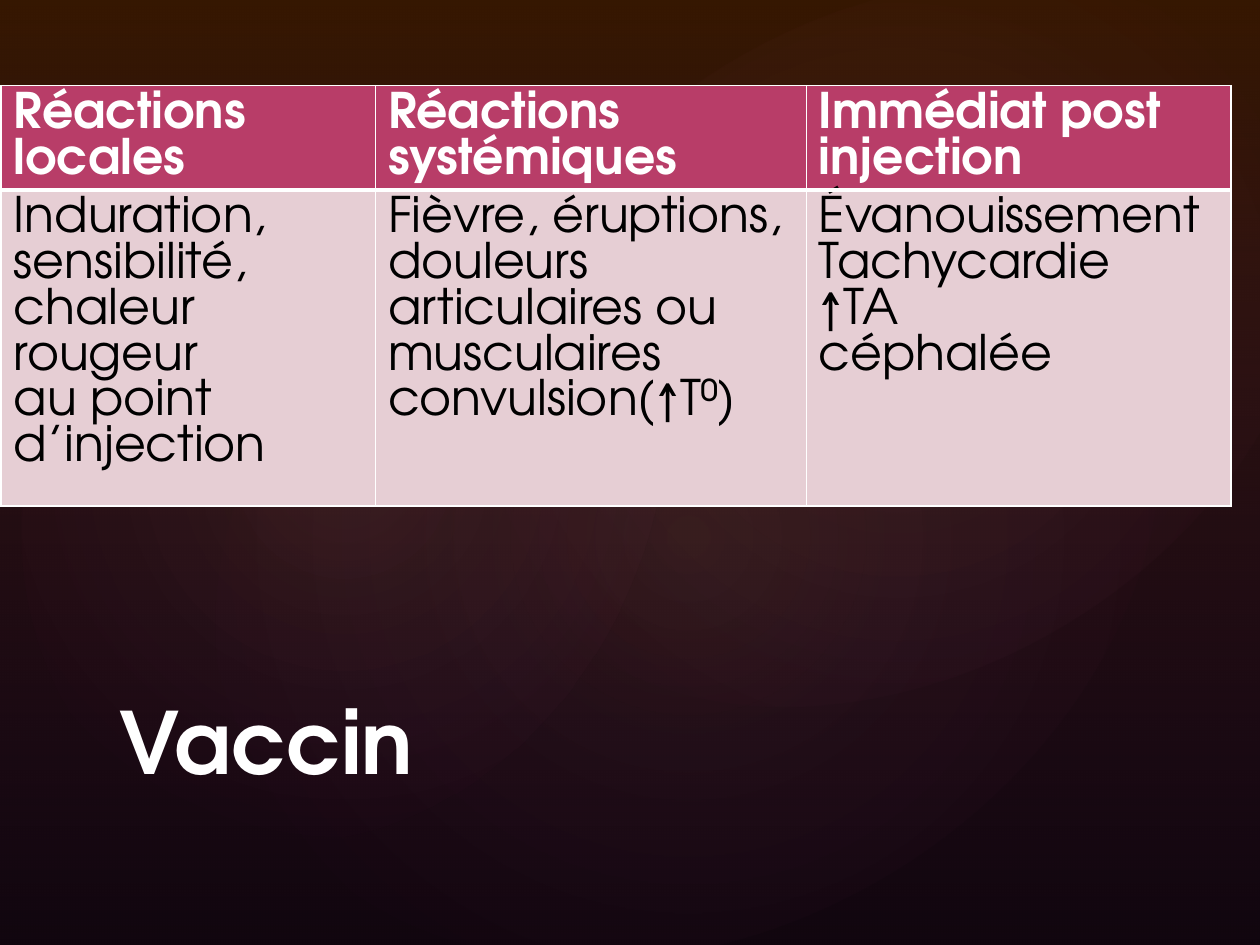
from lxml import etree
from pptx import Presentation
from pptx.dml.color import RGBColor
from pptx.enum import shapes, text
from pptx.oxml import ns
from pptx.util import Inches, Pt

# Content
TITLE = "Vaccin"
REACTIONS = [
    ("Réactions locales",
     "Induration,\nsensibilité,\nchaleur rougeur\nau point d’injection"),
    ("Réactions systémiques",
     "Fièvre, éruptions, douleurs articulaires ou musculaires convulsion(↑T⁰)"),
    ("Immédiat post injection",
     "Évanouissement\vTachycardie\n↑TA\ncéphalée"),
]

# Format
FONT = "TeX Gyre Adventor"
COLORS = {"background": "000000", "white": "FFFFFF", "black": "000000",
          "header": "B83D68", "body": "E6CED4",
          "brown": "984204", "violet": "B13F9A", "glow": "FCBB8B"}
COLUMN_WIDTHS = [2.97, 3.42, 3.37]
ROW_HEIGHTS = [0.82, 2.51]
ROW_STYLES = [
    {"fill": "header", "color": "white", "bold": True, "bottom": 3},
    {"fill": "body", "color": "black", "bold": False, "bottom": 1},
]
# Glows: left, top, width, height, rotation, opacity
GLOWS = [
    (1.5, 1.14, 7.92, 6.24, 328.7, 7),
    (-0.3, 1.28, 6.06, 4.9, 294.3, 8),
    (3.58, 0.13, 7.09, 5.2, 328.7, 8),
]
LINEAR = '<a:lin ang="5400000" scaled="0"/>'
RADIAL = ('<a:path path="circle"><a:fillToRect l="50000" t="50000" '
          'r="50000" b="50000"/></a:path>')


def rgb(name):
    return RGBColor.from_string(COLORS[name])


def format_font(font, **values):
    font.color.rgb = rgb(values.pop("color"))
    for name, value in {"name": FONT, **values}.items():
        setattr(font, name, value)


def add_backdrop(slide, master, preset, box, stops, direction, rotation=0):
    """Add a translucent gradient shape behind everything, on the master."""
    shape = slide.shapes.add_shape(preset, *map(Inches, box))
    shape.rotation = rotation
    shape.shadow.inherit = False
    shape.line.fill.background()
    shape.fill.background()
    stop_xml = "".join(
        f'<a:gs pos="{pos * 1000}"><a:srgbClr val="{COLORS[color]}">'
        f'<a:alpha val="{opacity * 1000}"/></a:srgbClr></a:gs>'
        for pos, color, opacity in stops)
    gradient = etree.fromstring(
        f'<a:gradFill {ns.nsdecls("a")} rotWithShape="1">'
        f'<a:gsLst>{stop_xml}</a:gsLst>{direction}</a:gradFill>')
    properties = shape._element.spPr
    properties.replace(properties.find(ns.qn("a:noFill")), gradient)
    tree = master.shapes._spTree
    first_placeholder = master.placeholders[0]._element
    tree.insert(tree.index(first_placeholder), shape._element)


def set_borders(cell, widths):
    properties = cell._tc.get_or_add_tcPr()
    for place, (side, width) in enumerate(widths.items()):
        properties.insert(place, etree.fromstring(
            f'<a:ln{side} {ns.nsdecls("a")} w="{Pt(width)}"><a:solidFill>'
            f'<a:srgbClr val="{COLORS["white"]}"/></a:solidFill></a:ln{side}>'))


def fill_cell(cell, wording, style, top):
    cell.text = wording
    cell.fill.solid()
    cell.fill.fore_color.rgb = rgb(style["fill"])
    set_borders(cell, {"L": 1, "R": 1, "T": top, "B": style["bottom"]})
    for paragraph in cell.text_frame.paragraphs:
        paragraph.line_spacing = Pt(26.2)
        for run in paragraph.runs:
            format_font(run.font, size=Pt(28), bold=style["bold"],
                        color=style["color"])


def main():
    prs = Presentation()
    prs.slide_width, prs.slide_height = Inches(10), Inches(7.5)
    slide = prs.slides.add_slide(prs.slide_layouts[5])

    # Background
    master = prs.slide_master
    master.background.fill.solid()
    master.background.fill.fore_color.rgb = rgb("background")
    add_backdrop(slide, master, shapes.MSO_SHAPE.RECTANGLE, (0, 0, 10, 7.5),
                 [(0, "brown", 36), (100, "violet", 10)], LINEAR)
    for *box, rotation, opacity in GLOWS:
        add_backdrop(slide, master, shapes.MSO_SHAPE.OVAL, box,
                     [(0, "glow", opacity), (58, "violet", 0)],
                     RADIAL, rotation)

    # Table of reactions
    table = slide.shapes.add_table(
        len(ROW_STYLES), len(REACTIONS), Inches(0.01), Inches(0.68),
        Inches(sum(COLUMN_WIDTHS)), Inches(sum(ROW_HEIGHTS))).table
    for column, width in zip(table.columns, COLUMN_WIDTHS):
        column.width = Inches(width)
    for row, height in zip(table.rows, ROW_HEIGHTS):
        row.height = Inches(height)
    for c, wordings in enumerate(REACTIONS):
        top = 1
        for r, (wording, style) in enumerate(zip(wordings, ROW_STYLES)):
            fill_cell(table.cell(r, c), wording, style, top)
            top = style["bottom"]

    # Title
    title = slide.shapes.title
    title.left, title.top = Inches(0.85), Inches(5.33)
    title.width, title.height = Inches(8.25), Inches(1)
    title.text = TITLE
    title.text_frame.vertical_anchor = text.MSO_ANCHOR.BOTTOM
    heading = title.text_frame.paragraphs[0]
    heading.alignment = text.PP_ALIGN.LEFT
    format_font(heading.runs[0].font, size=Pt(49), bold=True, color="white")

    prs.save("out.pptx")


if __name__ == "__main__":
    main()
